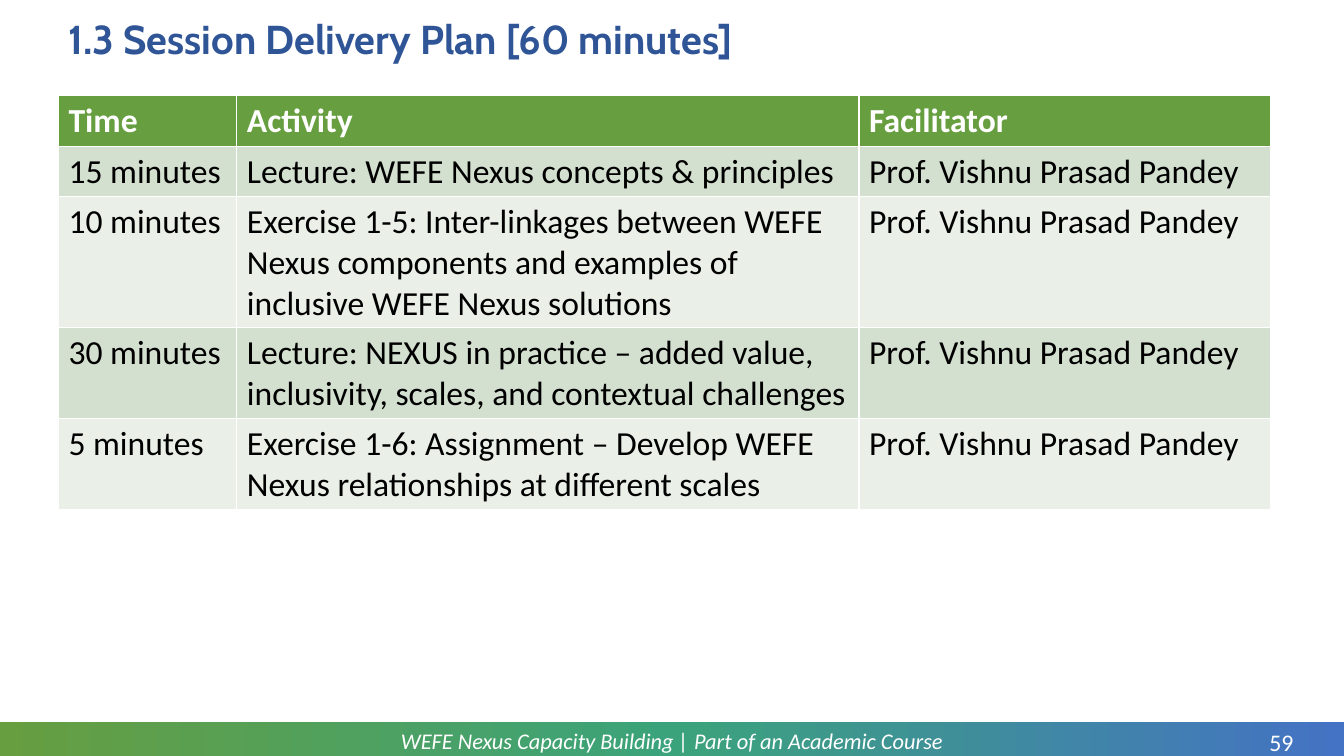
"""Build the session delivery plan slide with its timetable and footer."""
from copy import deepcopy

from pptx import Presentation
from pptx.dml.color import RGBColor
from pptx.enum import shapes, text
from pptx.util import Inches, Pt

WHITE = RGBColor(0xFF, 0xFF, 0xFF)
BLACK = RGBColor(0x00, 0x00, 0x00)
NAVY = RGBColor(0x2F, 0x55, 0x97)
GREEN = RGBColor(0x66, 0x9E, 0x40)
TEAL = RGBColor(0x3B, 0xA3, 0x7B)
BLUE = RGBColor(0x44, 0x72, 0xC4)
SAGE = RGBColor(0xD3, 0xDF, 0xCF)
MIST = RGBColor(0xEA, 0xF0, 0xE8)

HOST = "Prof. Vishnu Prasad Pandey"
ROWS = [
    ("Time", "Activity", "Facilitator"),
    ("15 minutes", "Lecture: WEFE Nexus concepts & principles", HOST),
    ("10 minutes", "Exercise 1-5: Inter-linkages between WEFE Nexus components "
     "and examples of inclusive WEFE Nexus solutions", HOST),
    ("30 minutes", "Lecture: NEXUS in practice – added value, inclusivity, "
     "scales, and contextual challenges", HOST),
    ("5 minutes", "Exercise 1-6: Assignment – Develop WEFE Nexus relationships "
     "at different scales", HOST),
]


def write(frame, words, size, color, face="Calibri", bold=False, italic=False):
    para = frame.paragraphs[0]
    run = para.add_run()
    run.text = words
    font = run.font
    font.name, font.size, font.bold, font.italic = face, Pt(size), bold, italic
    font.color.rgb = color
    return para


def box(left, top, width, height):
    frame = slide.shapes.add_textbox(
        Inches(left), Inches(top), Inches(width), Inches(height)).text_frame
    frame.word_wrap = True
    return frame


deck = Presentation()
deck.slide_width, deck.slide_height = Inches(13.33), Inches(7.5)
slide = deck.slides.add_slide(deck.slide_layouts[5])

bar = slide.shapes.add_shape(
    shapes.MSO_SHAPE.RECTANGLE, 0, Inches(7.16), deck.slide_width, Inches(0.38))
bar.shadow.inherit = False
bar.line.fill.background()
bar.fill.gradient()
bar.fill.gradient_angle = 0
first = bar._element.spPr.xpath("a:gradFill/a:gsLst/a:gs")[0]
first.addnext(deepcopy(first))
for stop, place, color in zip(bar.fill.gradient_stops, (0, 0.5, 1), (GREEN, TEAL, BLUE)):
    stop.position = place
    stop.color.rgb = color

foot = box(0.92, 7.17, 11.49, 0.36)
foot.vertical_anchor = text.MSO_ANCHOR.MIDDLE
para = write(foot, "WEFE Nexus Capacity Building | Part of an Academic Course",
             16, WHITE, italic=True)
para.alignment = text.PP_ALIGN.CENTER
para.space_after = Pt(8)

page = box(12.41, 7.22, 0.6, 0.29)
page.margin_left = page.margin_right = page.margin_top = page.margin_bottom = 0
write(page, "59", 17, WHITE).alignment = text.PP_ALIGN.CENTER

title = slide.shapes.title
title.left, title.top = Inches(0.58), Inches(0.13)
title.width, title.height = Inches(12.15), Inches(0.56)
title.text_frame.vertical_anchor = text.MSO_ANCHOR.MIDDLE
para = write(title.text_frame, "1.3 Session Delivery Plan [60 minutes]",
             28.8, NAVY, "Cabin", bold=True)
para.alignment = text.PP_ALIGN.LEFT
para.line_spacing = 0.9

plan = slide.shapes.add_table(
    len(ROWS), 3, Inches(0.58), Inches(0.95), Inches(12.02), Inches(2.05)).table
for col, width in zip(plan.columns, (1.77, 6.17, 4.08)):
    col.width = Inches(width)
for r, row in enumerate(ROWS):
    head = r == 0
    shade = GREEN if head else SAGE if r % 2 else MIST
    for c, words in enumerate(row):
        cell = plan.cell(r, c)
        cell.fill.solid()
        cell.fill.fore_color.rgb = shade
        write(cell.text_frame, words, 24, WHITE if head else BLACK, bold=head)

deck.save("out.pptx")
